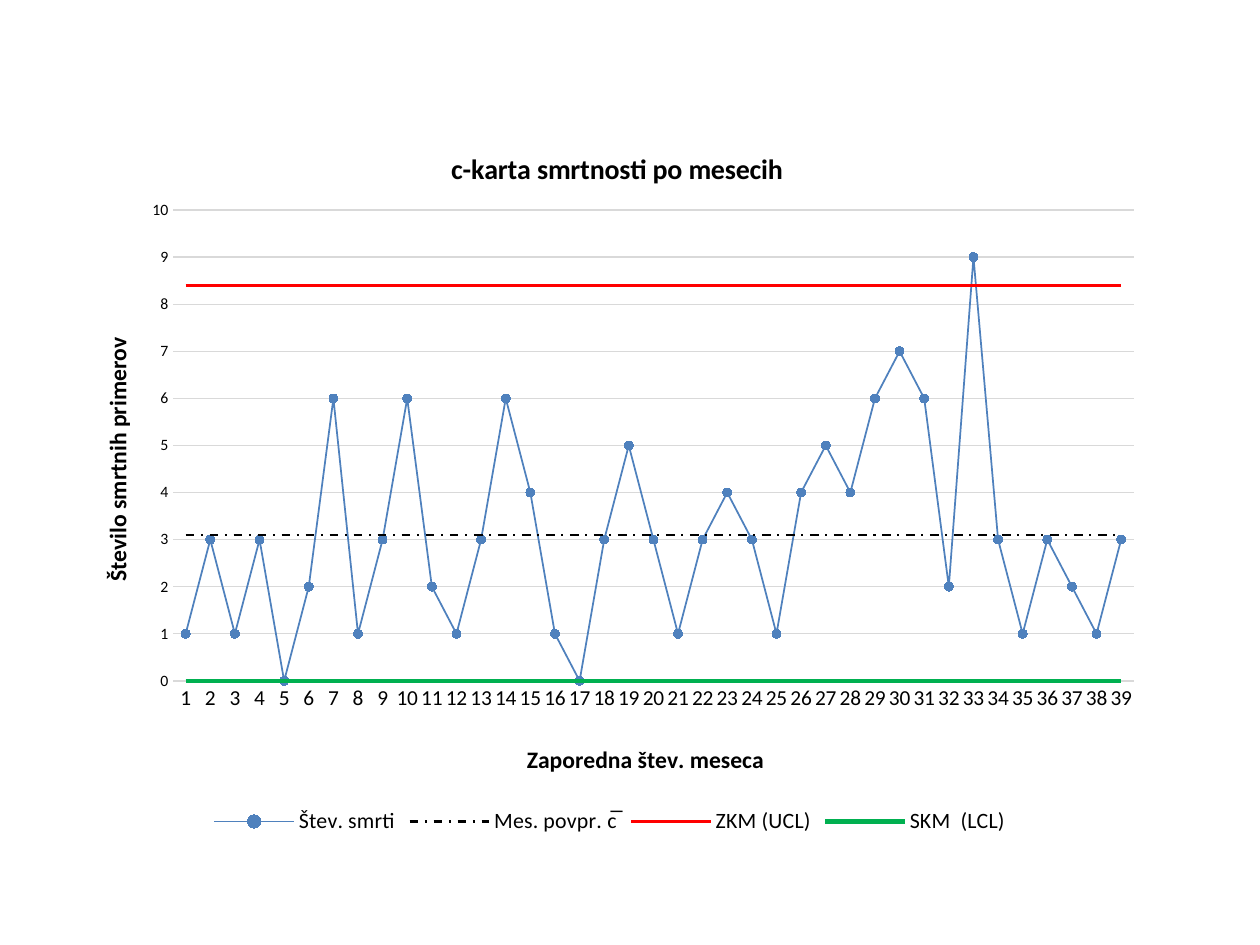
from dataclasses import dataclass

from lxml.etree import SubElement
from pptx import Presentation
from pptx.chart.data import CategoryChartData
from pptx.dml.color import RGBColor
from pptx.enum.chart import (XL_CHART_TYPE as ChartType, XL_LEGEND_POSITION as LegendPos,
                             XL_MARKER_STYLE as Marker, XL_TICK_MARK as Tick)
from pptx.enum.dml import MSO_LINE as Dash
from pptx.oxml.ns import qn
from pptx.util import Inches, Pt


@dataclass(frozen=True)
class Theme:
    font: str = "Calibri"
    text: RGBColor = RGBColor(0x00, 0x00, 0x00)
    grid: RGBColor = RGBColor(0xD9, 0xD9, 0xD9)
    deaths: RGBColor = RGBColor(0x4F, 0x81, 0xBD)
    mean: RGBColor = RGBColor(0x00, 0x00, 0x00)
    upper: RGBColor = RGBColor(0xFF, 0x00, 0x00)
    lower: RGBColor = RGBColor(0x00, 0xB0, 0x50)
    base_size: float = 10
    title_size: float = 16
    axis_title_size: float = 13.5
    month_size: float = 12.2
    count_size: float = 9
    legend_size: float = 12.5


THEME = Theme()

DEATHS = [1, 3, 1, 3, 0, 2, 6, 1, 3, 6, 2, 1, 3, 6, 4, 1, 0, 3, 5, 3,
          1, 3, 4, 3, 1, 4, 5, 4, 6, 7, 6, 2, 9, 3, 1, 3, 2, 1, 3]
MONTHS = len(DEATHS)

# name, values, colour, line width, dash
SERIES = [
    ("Štev. smrti", DEATHS, THEME.deaths, 1, None),
    ("Mes. povpr. c̅", [3.1] * MONTHS, THEME.mean, 1.25, Dash.DASH_DOT),
    ("ZKM (UCL)", [8.4] * MONTHS, THEME.upper, 1.5, None),
    ("SKM  (LCL)", [0] * MONTHS, THEME.lower, 2.5, None),
]


def style_font(font, size, bold=False):
    font.name = THEME.font
    font.size = Pt(size)
    font.bold = bold
    font.color.rgb = THEME.text


def place(element, after=None, inner=False, **fractions):
    """Fix a chart part at fractions (x, y, w, h) of the chart area."""
    for old in element.findall(qn("c:layout")):
        element.remove(old)
    layout = element.makeelement(qn("c:layout"))
    element.insert(0 if after is None else element.index(element.find(qn(after))) + 1, layout)
    manual = SubElement(layout, qn("c:manualLayout"))
    if inner:
        SubElement(manual, qn("c:layoutTarget")).set("val", "inner")
    for side in "xy":
        SubElement(manual, qn(f"c:{side}Mode")).set("val", "edge")
    for key, value in fractions.items():
        SubElement(manual, qn(f"c:{key}")).set("val", str(value))


def add_title(owner, text, size, x, y):
    """Give a title to the chart or to one of its axes."""
    title = owner.chart_title if hasattr(owner, "chart_title") else owner.axis_title
    run = title.text_frame.paragraphs[0].add_run()
    run.text = text
    style_font(run.font, size, bold=True)
    place(title._element, after="c:tx", x=x, y=y)


def style_axis(axis, size):
    axis.major_tick_mark = axis.minor_tick_mark = Tick.NONE
    style_font(axis.tick_labels.font, size)


def style_line(line, color, width):
    line.color.rgb = color
    line.width = Pt(width)


def style_series(series, color, width, dash):
    series.smooth = False
    style_line(series.format.line, color, width)
    if dash:
        series.format.line.dash_style = dash
    series.marker.style = Marker.NONE


def add_control_chart(slide):
    data = CategoryChartData()
    data.categories = [str(month) for month in range(1, MONTHS + 1)]
    for name, values, *_ in SERIES:
        data.add_series(name, values)
    chart = slide.shapes.add_chart(ChartType.LINE_MARKERS, Inches(0.51), Inches(0.92),
                                   Inches(8.66), Inches(5.75), data).chart
    style_font(chart.font, THEME.base_size)
    add_title(chart, "c-karta smrtnosti po mesecih", THEME.title_size, 0.35, 0.04)
    chart.chart_title.include_in_layout = False

    # Plot and lines
    plot = chart.plots[0]
    plot.vary_by_categories = False
    place(chart._chartSpace.chart.plotArea, inner=True, x=0.1, y=0.13, w=0.88, h=0.65)
    for series, (_, _, color, width, dash) in zip(plot.series, SERIES):
        style_series(series, color, width, dash)

    # Markers on the monthly deaths
    marker = plot.series[0].marker
    marker.style = Marker.CIRCLE
    marker.size = 5
    marker.format.fill.solid()
    marker.format.fill.fore_color.rgb = THEME.deaths
    marker.format.line.color.rgb = THEME.deaths

    # Axes
    months, counts = chart.category_axis, chart.value_axis
    style_axis(months, THEME.month_size)
    style_line(months.format.line, THEME.grid, 0.75)
    add_title(months, "Zaporedna štev. meseca", THEME.axis_title_size, 0.42, 0.86)

    style_axis(counts, THEME.count_size)
    counts.minimum_scale, counts.maximum_scale, counts.major_unit = 0, 10, 1
    counts.format.line.fill.background()
    style_line(counts.major_gridlines.format.line, THEME.grid, 0.75)
    add_title(counts, "Število smrtnih primerov", THEME.axis_title_size, 0.03, 0.3)
    counts.axis_title.text_frame._txBody.bodyPr.set("rot", "-5400000")
    counts.axis_title.text_frame._txBody.bodyPr.set("vert", "horz")

    # Legend
    chart.has_legend = True
    chart.legend.position = LegendPos.BOTTOM
    chart.legend.include_in_layout = False
    style_font(chart.legend.font, THEME.legend_size)


def main():
    deck = Presentation()
    deck.slide_width, deck.slide_height = Inches(10), Inches(7.5)
    slide = deck.slides.add_slide(deck.slide_layouts[6])
    add_control_chart(slide)
    deck.save("out.pptx")


if __name__ == "__main__":
    main()
